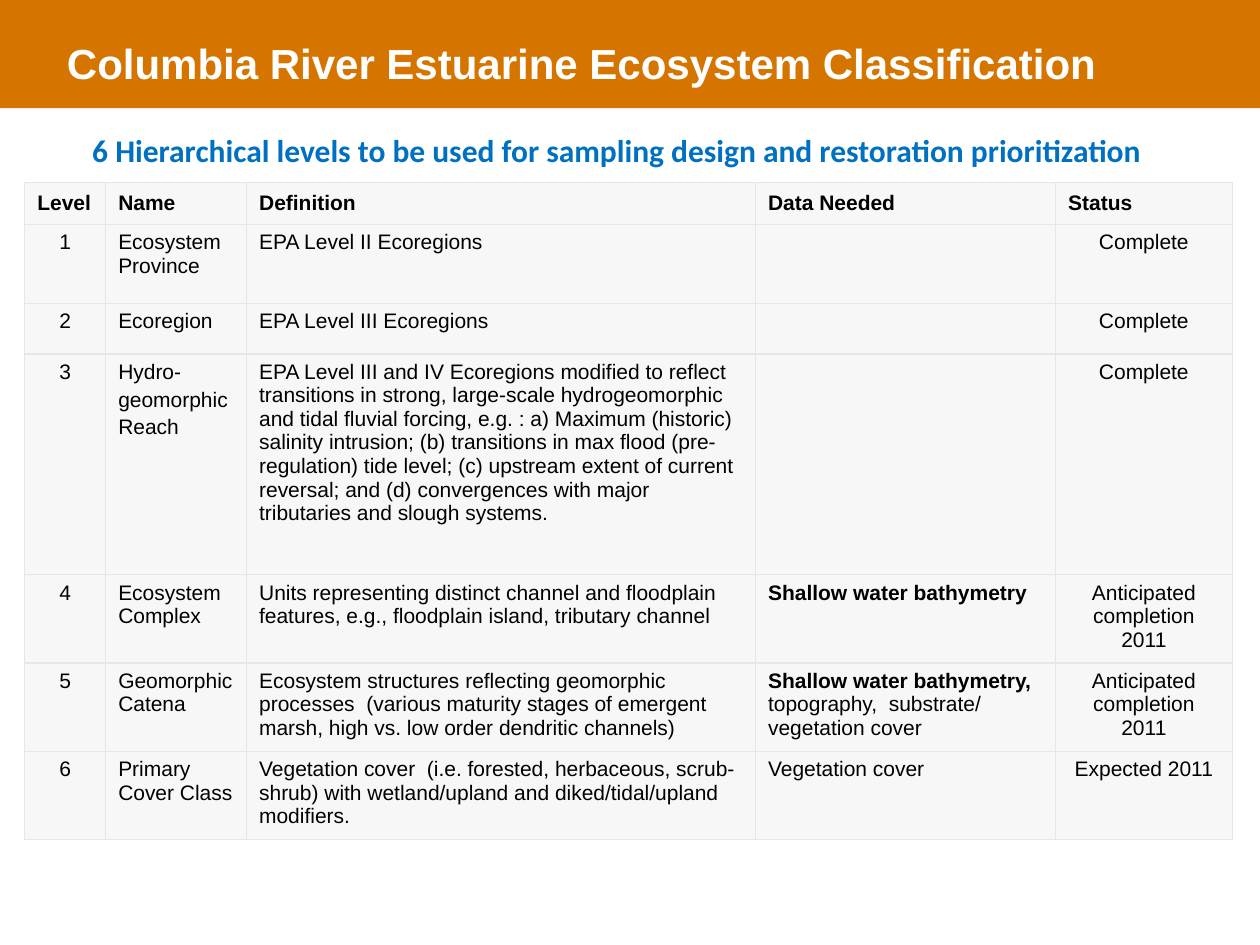
"""Build the Columbia River estuarine ecosystem classification slide."""
from dataclasses import dataclass
from typing import Optional

from lxml import etree
from pptx import Presentation
from pptx import util as u
from pptx.dml.color import RGBColor
from pptx.enum import shapes, text
from pptx.oxml import ns


@dataclass(frozen=True)
class Theme:
    banner: str = "D57500"
    title: str = "FFFFFF"
    subtitle: str = "0070C0"
    ink: str = "000000"
    cell: str = "F7F7F7"
    border: str = "E6E6E6"
    font: str = "Arial"
    subtitle_font: str = "Calibri"
    title_size: int = 24
    subtitle_size: int = 18
    table_size: int = 12
    para_gap: float = 2.4
    border_width: float = 0.75


@dataclass(frozen=True)
class Level:
    number: str
    name: str
    definition: str
    status: str
    key_data: str = ""
    data: str = ""


@dataclass(frozen=True)
class Style:
    font: str
    size: int
    color: str
    bold: bool = False


T = Theme()
TITLE = Style(T.font, T.title_size, T.title, True)
SUBTITLE = Style(T.subtitle_font, T.subtitle_size, T.subtitle, True)
BODY = Style(T.font, T.table_size, T.ink)
STRONG = Style(T.font, T.table_size, T.ink, True)

HEADERS = ("Level", "Name", "Definition", "Data Needed", "Status")
COL_WIDTHS = (1.63, 2.84, 10.26, 6.05, 3.56)
ROW_HEIGHTS = (0.84, 1.6, 0.89, 4.45, 1.68, 1.68, 1.68)
LEVELS = (
    Level("1", "Ecosystem Province", "EPA Level II Ecoregions", "Complete"),
    Level("2", "Ecoregion", "EPA Level III Ecoregions", "Complete"),
    Level("3", "Hydro-\ngeomorphic\nReach",
          "EPA Level III and IV Ecoregions modified to reflect transitions in strong, "
          "large-scale hydrogeomorphic and tidal fluvial forcing, e.g. : a) Maximum "
          "(historic) salinity intrusion; (b) transitions in max flood (pre-regulation) "
          "tide level; (c) upstream extent of current reversal; and (d) convergences "
          "with major tributaries and slough systems.", "Complete"),
    Level("4", "Ecosystem Complex",
          "Units representing distinct channel and floodplain features, e.g., "
          "floodplain island, tributary channel",
          "Anticipated completion 2011", "Shallow water bathymetry"),
    Level("5", "Geomorphic Catena",
          "Ecosystem structures reflecting geomorphic processes  (various maturity "
          "stages of emergent marsh, high vs. low order dendritic channels)",
          "Anticipated completion 2011", "Shallow water bathymetry, ",
          "topography,  substrate/ vegetation cover"),
    Level("6", "Primary Cover Class",
          "Vegetation cover  (i.e. forested, herbaceous, scrub-shrub) with "
          "wetland/upland and diked/tidal/upland modifiers.",
          "Expected 2011", data="Vegetation cover"),
)


def add_run(p, content: str, style: Style) -> None:
    """Append one styled run to a paragraph."""
    r = p.add_run()
    r.text = content
    r.font.name = style.font
    r.font.size = u.Pt(style.size)
    r.font.bold = style.bold
    r.font.color.rgb = RGBColor.from_string(style.color)


def add_heading(s, box: tuple[float, float, float, float], content: str,
                style: Style, spacing: Optional[float] = None) -> None:
    """Add a one-line text box without insets."""
    tf = s.shapes.add_textbox(*map(u.Cm, box)).text_frame
    tf.word_wrap = True
    tf.margin_left = tf.margin_right = tf.margin_top = tf.margin_bottom = 0
    p = tf.paragraphs[0]
    p.line_spacing = spacing
    add_run(p, content, style)


def add_banner(s, width: int) -> None:
    """Draw the full-width band behind the title."""
    sp = s.shapes.add_shape(shapes.MSO_SHAPE.RECTANGLE, 0, 0, width, u.Cm(2.18))
    sp.shadow.inherit = False
    sp.fill.solid()
    sp.fill.fore_color.rgb = RGBColor.from_string(T.banner)
    sp.line.fill.background()


def format_cell(cell) -> None:
    """Give a cell its fill and four thin borders."""
    tc_pr = cell._tc.get_or_add_tcPr()
    for side in ("a:lnL", "a:lnR", "a:lnT", "a:lnB"):
        ln = etree.SubElement(tc_pr, ns.qn(side), w=str(u.Pt(T.border_width)))
        fill = etree.SubElement(ln, ns.qn("a:solidFill"))
        etree.SubElement(fill, ns.qn("a:srgbClr"), val=T.border)
    cell.fill.solid()
    cell.fill.fore_color.rgb = RGBColor.from_string(T.cell)


def write_cell(cell, parts: list[tuple[str, Style]], centered: bool = False) -> None:
    """Write styled parts, starting a paragraph at each line break."""
    tf = cell.text_frame
    p = tf.paragraphs[0]
    if centered:
        p.alignment = text.PP_ALIGN.CENTER
    for content, style in parts:
        for i, line in enumerate(content.split("\n")):
            if i:
                p = tf.add_paragraph()
                p.space_before = u.Pt(T.para_gap)
            if line:
                add_run(p, line, style)


def add_level_table(s) -> None:
    """Add the table of hierarchical levels."""
    frame = s.shapes.add_table(len(ROW_HEIGHTS), len(COL_WIDTHS), u.Cm(0.5), u.Cm(3.68),
                               u.Cm(sum(COL_WIDTHS)), u.Cm(sum(ROW_HEIGHTS)))
    table = frame.table
    table.horz_banding = False
    for column, width in zip(table.columns, COL_WIDTHS):
        column.width = u.Cm(width)
    for row, height in zip(table.rows, ROW_HEIGHTS):
        row.height = u.Cm(height)
    for cell in table.iter_cells():
        format_cell(cell)
    for cell, header in zip(table.rows[0].cells, HEADERS):
        cell.vertical_anchor = text.MSO_ANCHOR.MIDDLE
        write_cell(cell, [(header, STRONG)])
    for i, level in enumerate(LEVELS, 1):
        number, name, definition, data, status = table.rows[i].cells
        write_cell(number, [(level.number, BODY)], centered=True)
        write_cell(name, [(level.name, BODY)])
        write_cell(definition, [(level.definition, BODY)])
        write_cell(data, [(level.key_data, STRONG), (level.data, BODY)])
        write_cell(status, [(level.status, BODY)], centered=True)


def main() -> None:
    """Build and save the slide."""
    prs = Presentation()
    prs.slide_width, prs.slide_height = u.Cm(25.4), u.Cm(19.05)
    s = prs.slides.add_slide(prs.slide_layouts[6])
    add_banner(s, prs.slide_width)
    add_heading(s, (1.35, 0.91, 22.78, 1.32),
                "Columbia River Estuarine Ecosystem Classification", TITLE, 0.85)
    add_heading(s, (1.86, 2.64, 23.54, 1.02),
                "6 Hierarchical levels to be used for sampling design and "
                "restoration prioritization", SUBTITLE)
    add_level_table(s)
    prs.save("out.pptx")


if __name__ == "__main__":
    main()
